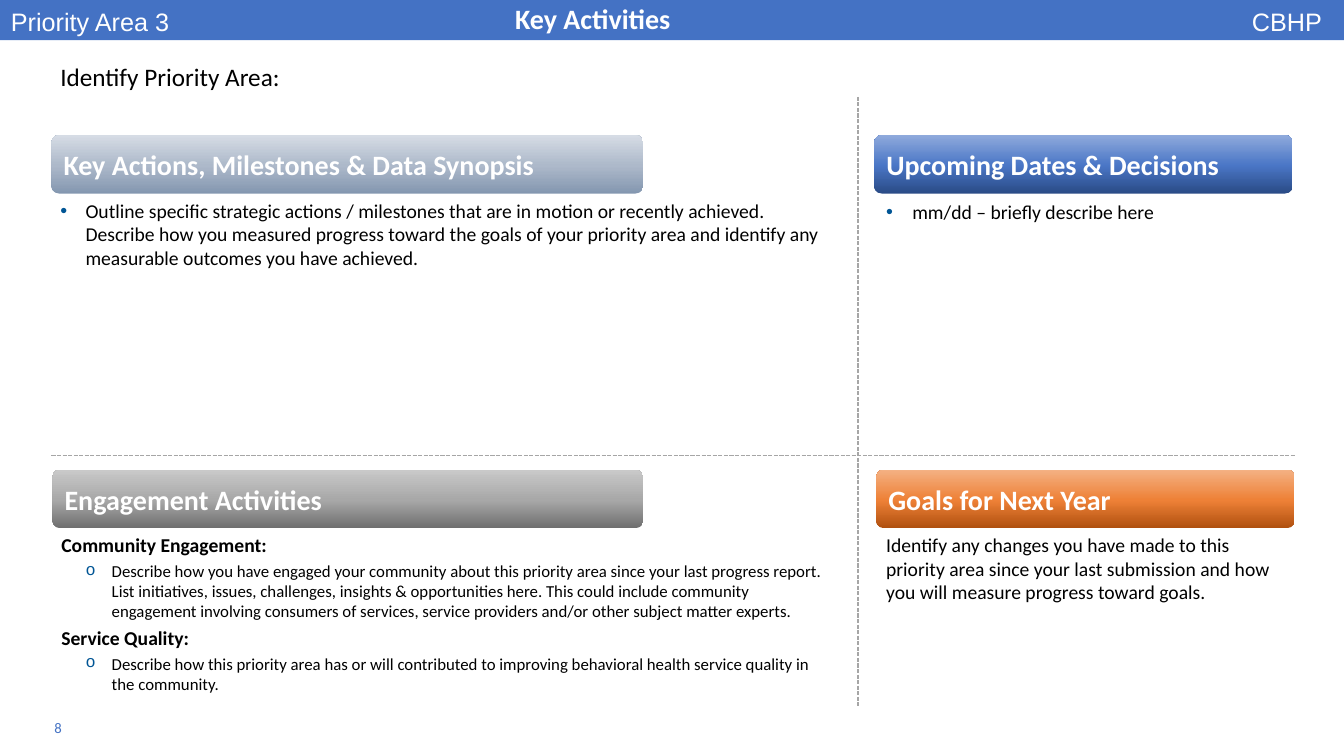
from copy import deepcopy

from lxml import etree
from pptx import Presentation
from pptx import util as u
from pptx.dml.color import RGBColor
from pptx.enum import dml, shapes, text
from pptx.oxml.ns import qn

COLORS = {
    "bar": "4472C4", "white": "FFFFFF", "black": "000000",
    "bullet": "005595", "rule": "A6A6A6",
}
GRADIENTS = {
    "slate": ("8497B0", "ADB9CA", "D6DCE5"),
    "gray": ("6F6F6F", "A8A8A8", "C9C9C9"),
    "blue": ("2A4B86", "4A76C6", "8FAADC"),
    "orange": ("B0500F", "EE8137", "F4B183"),
}


def rgb(name):
    return RGBColor.from_string(COLORS[name])


def write(p, words, size=14, font="Calibri", color="black", bold=False,
          after=0, bullet=None, left=0, hang=0, align=text.PP_ALIGN.LEFT):
    if bullet:
        pPr = p._p.get_or_add_pPr()
        pPr.set("marL", str(u.Inches(left)))
        pPr.set("indent", str(-u.Inches(hang)))
        clr = etree.SubElement(pPr, qn("a:buClr"))
        etree.SubElement(clr, qn("a:srgbClr"), val=COLORS["bullet"])
        face = "Arial" if bullet == "•" else "Courier New"
        etree.SubElement(pPr, qn("a:buFont"), typeface=face)
        etree.SubElement(pPr, qn("a:buChar"), char=bullet)
    p.alignment = align
    p.space_after = u.Pt(after)
    r = p.add_run()
    r.text = words
    r.font.size = u.Pt(size)
    r.font.name = font
    r.font.bold = bold
    r.font.color.rgb = rgb(color)


class Slide:
    def __init__(self, prs):
        self.s = prs.slides.add_slide(prs.slide_layouts[6])

    def shape(self, kind, box):
        sp = self.s.shapes.add_shape(kind, *map(u.Inches, box))
        sp.shadow.inherit = False
        sp.line.fill.background()
        return sp

    def bar(self, box):
        sp = self.shape(shapes.MSO_SHAPE.RECTANGLE, box)
        sp.fill.solid()
        sp.fill.fore_color.rgb = rgb("bar")

    def heading(self, words, box, gradient):
        sp = self.shape(shapes.MSO_SHAPE.ROUNDED_RECTANGLE, box)
        sp.adjustments[0] = 0.13
        sp.fill.gradient()
        sp.fill.gradient_angle = 90
        first = sp._element.spPr.find(".//" + qn("a:gs"))
        first.addnext(deepcopy(first))
        for stop, place, color in zip(sp.fill.gradient_stops, (0, 0.48, 1), GRADIENTS[gradient]):
            stop.position = place
            stop.color.rgb = RGBColor.from_string(color)
        tf = sp.text_frame
        tf.vertical_anchor = text.MSO_ANCHOR.MIDDLE
        write(tf.paragraphs[0], words, size=20, color="white", bold=True)

    def text(self, box, *paragraphs, wrap=True, anchor=text.MSO_ANCHOR.TOP):
        tf = self.s.shapes.add_textbox(*map(u.Inches, box)).text_frame
        tf.word_wrap = wrap
        tf.vertical_anchor = anchor
        for i, (words, style) in enumerate(paragraphs):
            p = tf.add_paragraph() if i else tf.paragraphs[0]
            write(p, words, **style)

    def rule(self, x1, y1, x2, y2):
        ends = map(u.Inches, (x1, y1, x2, y2))
        ln = self.s.shapes.add_connector(shapes.MSO_CONNECTOR.STRAIGHT, *ends)
        ln.line.color.rgb = rgb("rule")
        ln.line.width = u.Pt(1)
        ln.line.dash_style = dml.MSO_LINE.SQUARE_DOT
        etree.SubElement(ln._element.spPr, qn("a:effectLst"))


def main():
    prs = Presentation()
    prs.slide_width, prs.slide_height = u.Inches(13.33), u.Inches(7.5)
    s = Slide(prs)

    s.bar((0, 0, 13.33, 0.4))
    corner = dict(size=18, font="Arial", color="white")
    s.text((0.01, 0.01, 4.99, 0.4), ("Priority Area 3", corner))
    s.text((5.01, -0.03, 1.82, 0.44),
           ("Key Activities", dict(size=20, color="white", bold=True)), wrap=False)
    s.text((12.31, 0.01, 0.9, 0.4),
           ("CBHP", dict(corner, align=text.PP_ALIGN.RIGHT)), wrap=False)
    s.text((0.5, 0.56, 7.84, 0.4), ("Identify Priority Area:", dict(size=18)))

    s.rule(8.51, 0.96, 8.51, 7)
    s.rule(0.51, 4.52, 12.85, 4.52)

    for words, x, y, w, gradient in (
        ("Key Actions, Milestones & Data Synopsis", 0.51, 1.34, 5.87, "slate"),
        ("Upcoming Dates & Decisions", 8.67, 1.34, 4.15, "blue"),
        ("Engagement Activities", 0.52, 4.66, 5.86, "gray"),
        ("Goals for Next Year", 8.69, 4.66, 4.15, "orange"),
    ):
        s.heading(words, (x, y, w, 0.58), gradient)

    dot = dict(after=6, bullet="•", left=0.25, hang=0.25)
    topic = dict(bold=True, after=3)
    detail = dict(size=12, after=3, bullet="o", left=0.5, hang=0.26)
    s.text((0.5, 1.92, 7.84, 2.6), (
        "Outline specific strategic actions / milestones that are in motion or "
        "recently achieved. Describe how you measured progress toward the goals of "
        "your priority area and identify any measurable outcomes you have achieved.", dot))
    s.text((8.69, 1.93, 4.15, 2.48),
           ("mm/dd – briefly describe here", dict(dot, left=0.26, hang=0.26)))
    s.text(
        (0.51, 5.24, 7.82, 1.76),
        ("Community Engagement:", topic),
        ("Describe how you have engaged your community about this priority area since "
         "your last progress report. List initiatives, issues, challenges, insights & "
         "opportunities here. This could include community engagement involving consumers "
         "of services, service providers and/or other subject matter experts.", detail),
        ("Service Quality:", topic),
        ("Describe how this priority area has or will contributed to improving behavioral "
         "health service quality in the community.", detail),
    )
    s.text((8.69, 5.24, 4.15, 0.81), (
        "Identify any changes you have made to this priority area since your last "
        "submission and how you will measure progress toward goals.", dict(after=3)))
    s.text((0.44, 7.08, 3.11, 0.27), ("8", dict(size=10.5, color="bar")),
           anchor=text.MSO_ANCHOR.MIDDLE)

    prs.save("out.pptx")


if __name__ == "__main__":
    main()
